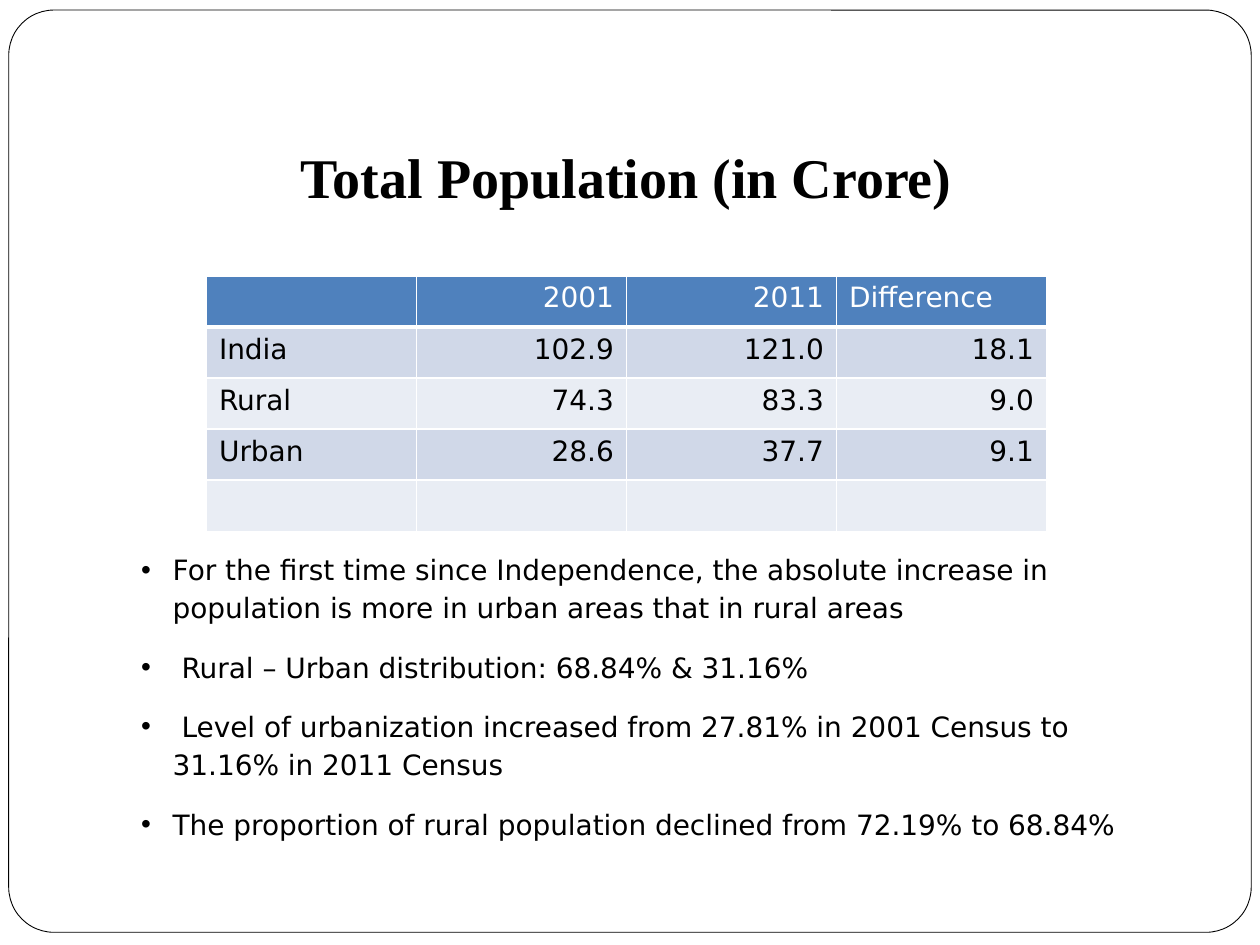
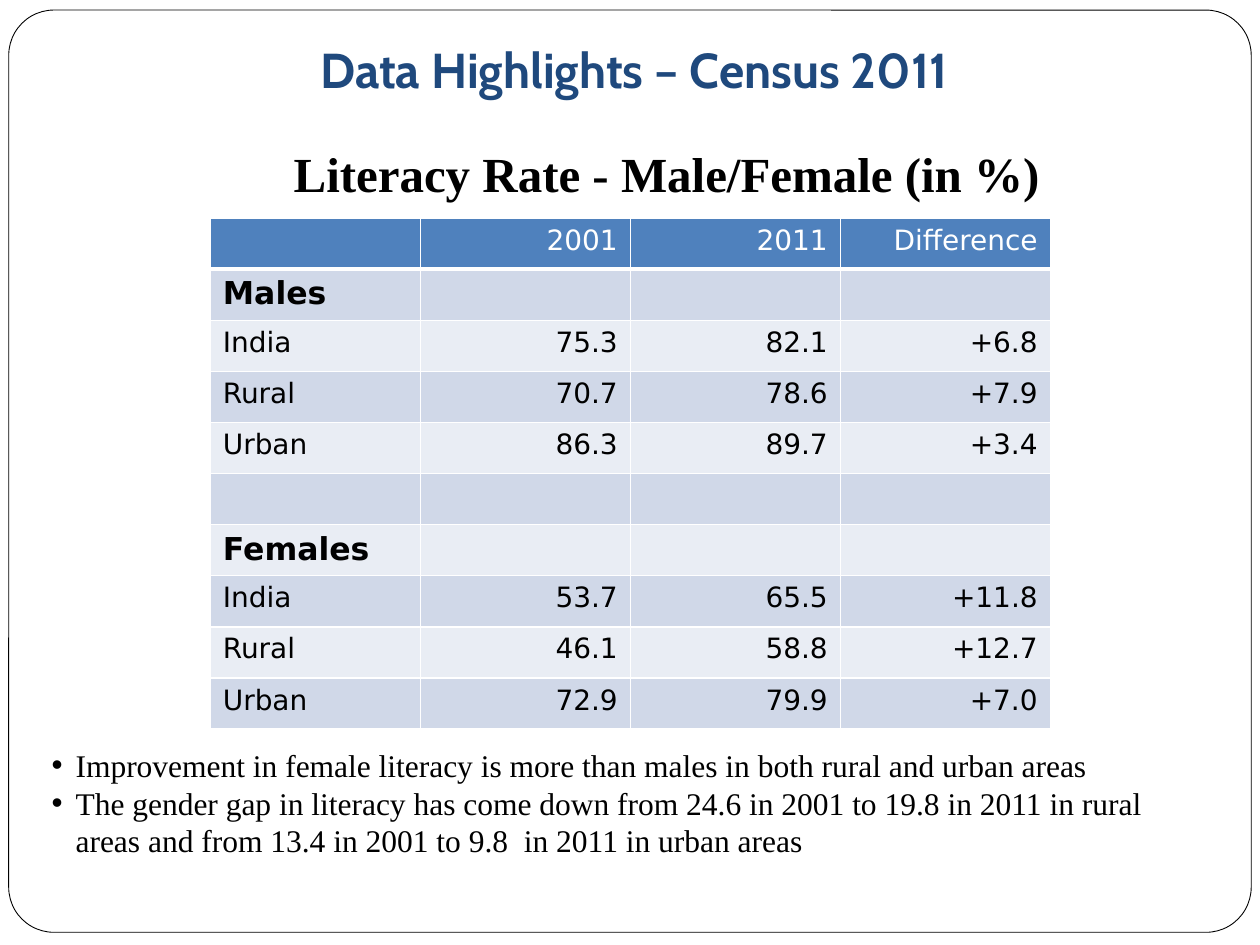
from lxml import etree
from pptx import Presentation
from pptx import util as u
from pptx.dml.color import RGBColor
from pptx.enum import shapes, text
from pptx.oxml.ns import qn

COLOURS = {
    "paper": "FFFFFF",
    "ink": "000000",
    "heading": "1F497D",
    "header": "4F81BD",
    "band_dark": "D0D8E8",
    "band_light": "E9EDF4",
}
SERIF, SANS, DISPLAY = "Times New Roman", "DejaVu Sans", "Cabin"
COLUMN_WIDTH, ROW_HEIGHT = 120, 29.2
LEFT, CENTER, RIGHT = text.PP_ALIGN.LEFT, text.PP_ALIGN.CENTER, text.PP_ALIGN.RIGHT


def colour(name):
    return RGBColor.from_string(COLOURS[name])


def place(shape, box):
    shape.left, shape.top, shape.width, shape.height = [u.Pt(length) for length in box]


def add_span(para, words, size, font, ink="ink", bold=False):
    span = para.add_run()
    span.text = words
    span.font.size = u.Pt(size)
    span.font.name = font
    span.font.bold = bold
    span.font.color.rgb = colour(ink)


# Rounded page frame, shared through the slide master
def add_frame(deck, page):
    frame = page.shapes.add_shape(shapes.MSO_SHAPE.ROUNDED_RECTANGLE, 0, 0, 0, 0)
    place(frame, (5, 5.75, 710, 527))
    frame.adjustments[0] = 0.049
    frame.shadow.inherit = False
    frame.fill.solid()
    frame.fill.fore_color.rgb = colour("paper")
    frame.line.color.rgb = colour("ink")
    frame.line.width = u.Pt(0.5)
    deck.slide_master.shapes.element.insert(2, frame.element)


# One-line centred heading
def fill_heading(shape, box, words, size, font, ink="ink", anchor=text.MSO_ANCHOR.TOP):
    place(shape, box)
    frame = shape.text_frame
    frame.word_wrap = True
    frame.auto_size = text.MSO_AUTO_SIZE.NONE
    frame.vertical_anchor = anchor
    para = frame.paragraphs[0]
    para.alignment = CENTER
    add_span(para, words, size, font, ink, bold=True)


# Bulleted list in the body placeholder
def fill_bullets(shape, box, items, size, font, indent, spacing=1.0, gap=0):
    place(shape, box)
    frame = shape.text_frame
    frame.auto_size = text.MSO_AUTO_SIZE.NONE
    for index, item in enumerate(items):
        para = frame.add_paragraph() if index else frame.paragraphs[0]
        para.line_spacing = spacing
        para.space_before = para.space_after = u.Pt(gap)
        properties = para._p.get_or_add_pPr()
        properties.set("marL", str(u.Pt(indent)))
        properties.set("indent", str(-u.Pt(indent)))
        etree.SubElement(properties, qn("a:buFont"), typeface="Arial")
        etree.SubElement(properties, qn("a:buChar"), char="•")
        add_span(para, item, size, font)


def set_borders(cell, bottom_width):
    properties = cell._tc.get_or_add_tcPr()
    widths = {"lnL": 1, "lnR": 1, "lnT": 1, "lnB": bottom_width}
    for index, (side, width) in enumerate(widths.items()):
        line = etree.Element(qn("a:" + side), w=str(u.Pt(width)))
        fill = etree.SubElement(line, qn("a:solidFill"))
        etree.SubElement(fill, qn("a:srgbClr"), val=COLOURS["paper"])
        properties.insert(index, line)


# Census table: header row, banded rows, numbers to the right
def add_census_table(page, left, top, rows, last_header_align=RIGHT):
    columns = len(rows[0])
    table = page.shapes.add_table(
        len(rows), columns, u.Pt(left), u.Pt(top),
        u.Pt(columns * COLUMN_WIDTH), u.Pt(len(rows) * ROW_HEIGHT)).table
    for column in table.columns:
        column.width = u.Pt(COLUMN_WIDTH)
    for r, row in enumerate(rows):
        table.rows[r].height = u.Pt(ROW_HEIGHT)
        is_header = r == 0
        is_group = bool(row[0]) and not any(row[1:])
        band = "header" if is_header else "band_dark" if r % 2 else "band_light"
        for c, words in enumerate(row):
            cell = table.cell(r, c)
            set_borders(cell, 3 if is_header else 1)
            cell.fill.solid()
            cell.fill.fore_color.rgb = colour(band)
            if not words:
                continue
            para = cell.text_frame.paragraphs[0]
            para.alignment = RIGHT if c else LEFT
            if is_header and c == columns - 1:
                para.alignment = last_header_align
            add_span(para, words, 18 if is_group else 16, SANS,
                     "paper" if is_header else "ink", bold=is_group)


HEADER = ("", "2001", "2011", "Difference")
BLANK = ("",) * len(HEADER)


def build_population(page):
    title, body = page.placeholders
    fill_heading(title, (150, 78, 416, 46), "Total Population (in Crore)", 32, SERIF)
    add_census_table(page, 118, 157.6, [
        HEADER,
        ("India", "102.9", "121.0", "18.1"),
        ("Rural", "74.3", "83.3", "9.0"),
        ("Urban", "28.6", "37.7", "9.1"),
        BLANK,
    ], last_header_align=LEFT)
    fill_bullets(body, (73.5, 309.6, 602, 176.4), [
        "For the first time since Independence, the absolute increase in "
        "population is more in urban areas that in rural areas",
        " Rural – Urban distribution: 68.84% & 31.16%",
        " Level of urbanization increased from 27.81% in 2001 Census to "
        "31.16% in 2011 Census",
        "The proportion of rural population declined from 72.19% to 68.84%",
    ], 16, SANS, indent=18, spacing=1.14, gap=6)


def build_literacy(page):
    title, body = page.placeholders
    fill_heading(title, (67.7, 16.6, 590.4, 39.6), "Data Highlights – Census 2011",
                 28, DISPLAY, "heading", text.MSO_ANCHOR.BOTTOM)
    inset = title.text_frame
    inset.margin_left = inset.margin_top = inset.margin_bottom = 0
    inset.margin_right = u.Pt(1.44)
    subtitle = page.shapes.add_textbox(0, 0, 0, 0)
    fill_heading(subtitle, (144, 78.5, 473.8, 41), "Literacy Rate - Male/Female (in %)",
                 28, SERIF)
    add_census_table(page, 120.2, 124.6, [
        HEADER,
        ("Males", "", "", ""),
        ("India", "75.3", "82.1", "+6.8"),
        ("Rural", "70.7", "78.6", "+7.9"),
        ("Urban", "86.3", "89.7", "+3.4"),
        BLANK,
        ("Females", "", "", ""),
        ("India", "53.7", "65.5", "+11.8"),
        ("Rural", "46.1", "58.8", "+12.7"),
        ("Urban", "72.9", "79.9", "+7.0"),
    ])
    fill_bullets(body, (22.3, 422.6, 675.4, 72.7), [
        "Improvement in female literacy is more than males in both rural and urban areas",
        "The gender gap in literacy has come down from 24.6 in 2001 to 19.8 in 2011 "
        "in rural areas and from 13.4 in 2001 to 9.8  in 2011 in urban areas",
    ], 18, SERIF, indent=13.7)


def main():
    deck = Presentation()
    deck.slide_width, deck.slide_height = u.Pt(720), u.Pt(540)
    layout = deck.slide_layouts.get_by_name("Title and Content")
    pages = []
    for build in (build_population, build_literacy):
        page = deck.slides.add_slide(layout)
        build(page)
        pages.append(page)
    add_frame(deck, pages[0])
    deck.save("out.pptx")


if __name__ == "__main__":
    main()
